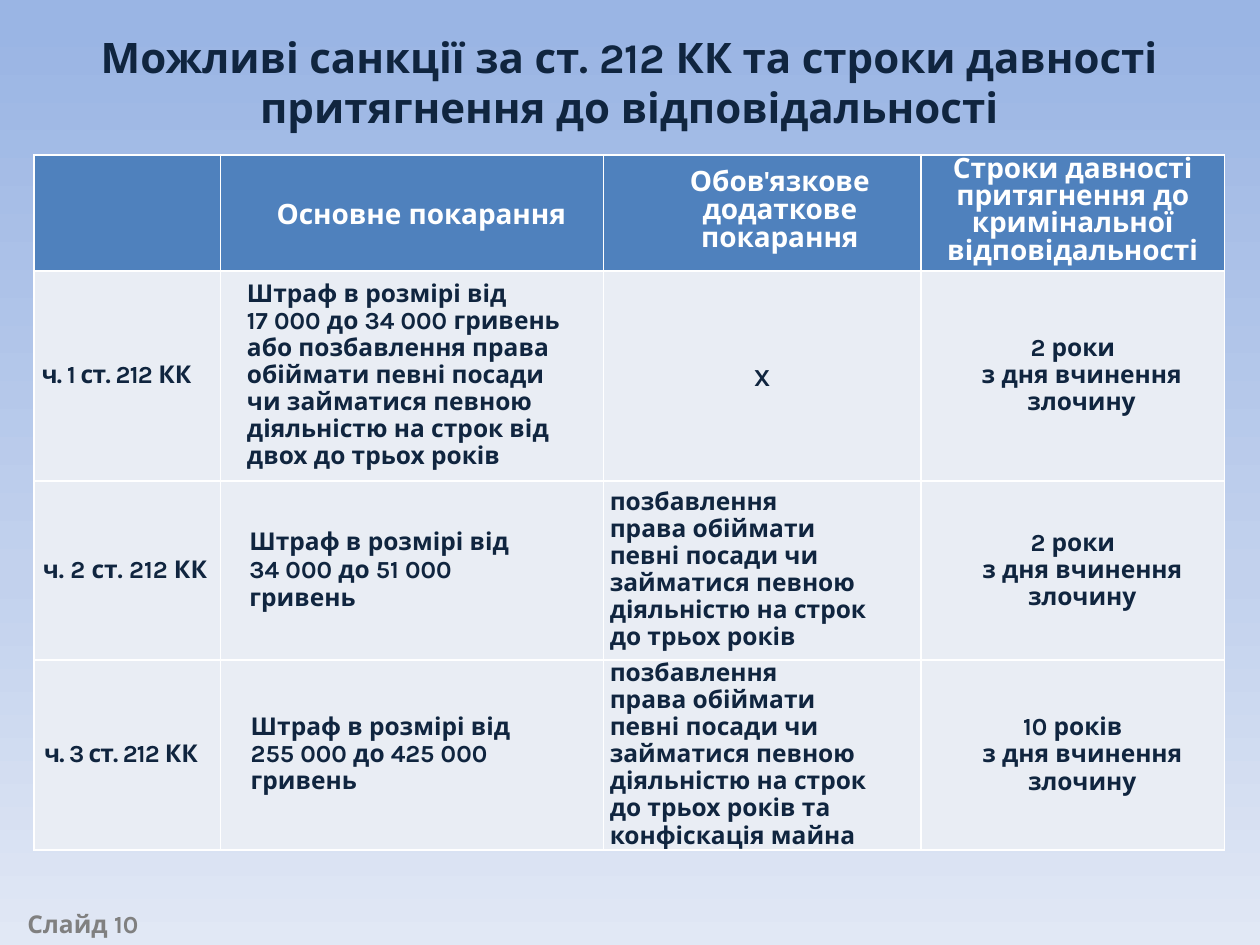
from copy import deepcopy
from pptx import Presentation
from pptx.dml.color import RGBColor
from pptx.enum.text import MSO_ANCHOR, MSO_AUTO_SIZE, PP_ALIGN
from pptx.oxml.ns import qn
from pptx.util import Inches, Pt

LEFT, CENTER = PP_ALIGN.LEFT, PP_ALIGN.CENTER
TOP, MIDDLE = MSO_ANCHOR.TOP, MSO_ANCHOR.MIDDLE
NAVY = RGBColor(0x10, 0x25, 0x3F)
WHITE = RGBColor(0xFF, 0xFF, 0xFF)
GRAY = RGBColor(0x80, 0x80, 0x80)
BLUE = RGBColor(0x4F, 0x81, 0xBD)
PALE = RGBColor(0xE9, 0xED, 0xF4)
STOPS = [
    (0.02, RGBColor(0x9A, 0xB5, 0xE4)),
    (0.61, RGBColor(0xC2, 0xD1, 0xED)),
    (1, RGBColor(0xE1, 0xE8, 0xF5)),
]


def add_run(para, text, size, color, track=0):
    run = para.add_run()
    run.text = text
    font = run.font
    font.name, font.size, font.bold = "Karla", Pt(size), True
    font.color.rgb = color
    if track:
        run._r.get_or_add_rPr().set("spc", str(round(track * 100)))


prs = Presentation()
prs.slide_width, prs.slide_height = Inches(10), Inches(7.5)
slide = prs.slides.add_slide(prs.slide_layouts[5])

fill = slide.background.fill
fill.gradient()
fill.gradient_angle = 270
stops = slide.element.find(".//" + qn("a:gsLst"))
stops.append(deepcopy(stops[-1]))
for stop, (place, color) in zip(fill.gradient_stops, STOPS):
    stop.position = place
    stop.color.rgb = color

title = slide.shapes.title
title.left, title.top = Inches(0.27), Inches(0.2)
title.width, title.height = Inches(9.45), Inches(0.91)
frame = title.text_frame
frame.auto_size = MSO_AUTO_SIZE.NONE
frame.vertical_anchor = TOP
frame.paragraphs[0].alignment = CENTER
add_run(frame.paragraphs[0],
        "Можливі санкції за ст. 212 КК та строки давності притягнення до відповідальності",
        24, NAVY)

BAN = ["позбавлення", "права обіймати", "певні посади чи", "займатися певною",
       "діяльністю на строк"]
FINE = "Штраф в розмірі від"
SINCE = "з дня вчинення злочину"
ROWS = [
    [
        (0, 15.8, []),
        (0.15, 1.15, ["Основне покарання"]),
        (0.28, 15.8, ["Обов'язкове додаткове покарання"]),
        (0, 15.5, ["Строки давності", "притягнення до", "кримінальної", "відповідальності"]),
    ],
    [
        (0.04, 15.8, [[("ч. 1 ст. 212 ", -0.4), ("КК", 0)]]),
        (0.19, 15.5, [FINE, "17 000 до 34 000 гривень", "або позбавлення права",
                      "обіймати певні посади", "чи займатися певною",
                      "діяльністю на строк від", "двох до трьох років"]),
        (0, 1.15, ["X"]),
        (0.14, 15.5, ["2 роки", SINCE]),
    ],
    [
        (0.05, 15.8, ["ч. 2 ст. 212 КК"]),
        (0.21, 15.8, [FINE, "34 000 до 51 000", "гривень"]),
        (0.03, 15.5, BAN + ["до трьох років"]),
        (0.15, 15.5, ["2 роки", SINCE]),
    ],
    [
        (0.06, 15.8, [[("ч. 3 ст. 212 ", -0.5), ("КК", 0)]]),
        (0.22, 15.5, [FINE, "255 000 до 425 000", "гривень"]),
        (0.03, 15.5, BAN + ["до трьох років та", "конфіскація майна"]),
        (0.15, 15.8, ["10 років", SINCE]),
    ],
]

table = slide.shapes.add_table(4, 4, Inches(0.27), Inches(1.23),
                               Inches(9.45), Inches(5.43)).table
table.horz_banding = False
for col, width in zip(table.columns, [1.48, 3.04, 2.52, 2.41]):
    col.width = Inches(width)
for row, height in zip(table.rows, [0.92, 1.67, 1.42, 1.42]):
    row.height = Inches(height)

for r, row in enumerate(ROWS):
    for c, (indent, line, paras) in enumerate(row):
        cell = table.cell(r, c)
        cell.fill.solid()
        cell.fill.fore_color.rgb = PALE if r else BLUE
        cell.vertical_anchor = MIDDLE
        cell.margin_left = cell.margin_right = Inches(0.02)
        cell.margin_top = cell.margin_bottom = 0
        mid = r == 0 or c == 3 or paras == ["X"]
        for i, runs in enumerate(paras):
            frame = cell.text_frame
            para = frame.add_paragraph() if i else frame.paragraphs[0]
            para.alignment = CENTER if mid else LEFT
            para.line_spacing = Pt(line) if line > 2 else line
            if c < 3 or i:
                props = para._p.get_or_add_pPr()
                props.set("marL", str(Inches(indent)))
                props.set("indent", "0")
            for text, track in [(runs, 0)] if isinstance(runs, str) else runs:
                add_run(para, text, 14 if r else 16, NAVY if r else WHITE, track)

foot = slide.shapes.add_textbox(Inches(0.12), Inches(7.13), Inches(9.77), Inches(0.4))
foot.text_frame.word_wrap = True
foot.text_frame.vertical_anchor = MIDDLE
add_run(foot.text_frame.paragraphs[0], "Слайд 10", 14, GRAY)

prs.save("out.pptx")
